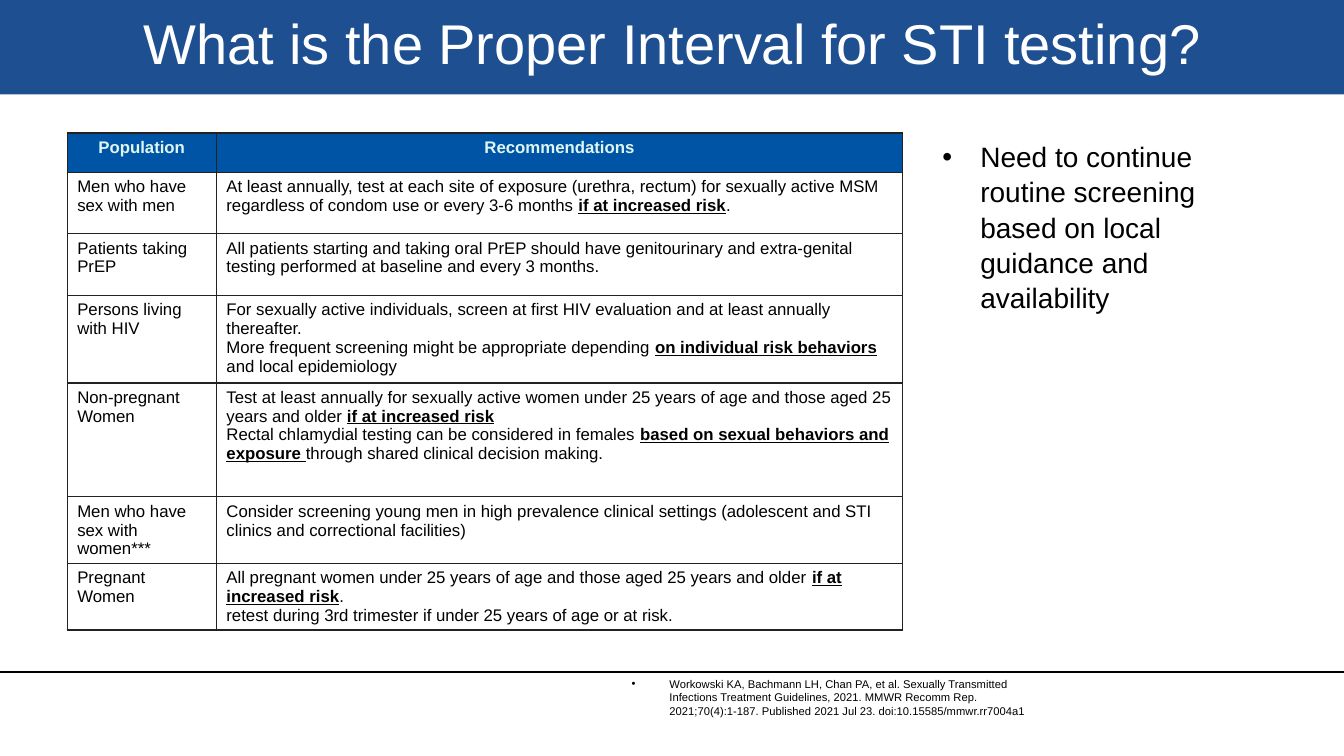
from lxml import etree
from pptx import Presentation
from pptx.dml.color import RGBColor
from pptx.enum import shapes, text
from pptx.oxml import ns
from pptx.util import Pt

COLORS = {
    "band": "1D4F91",
    "header": "0054A6",
    "header_text": "DEF6F1",
    "border": "222222",
    "text": "000000",
    "title": "FFFFFF",
}
FONT = "Arial"
WIDTH, HEIGHT = 960, 540
INDENT = 27
COLUMNS = [106.56, 490.32]
ROWS = [28, 44, 44, 62.6, 81.4, 44, 44]

# Runs alternate between plain and emphasized text.
GUIDANCE = [
    ("Men who have sex with men", [
        ["At least annually, test at each site of exposure (urethra, rectum) for sexually active MSM "
         "regardless of condom use or every 3-6 months ", "if at increased risk", "."],
    ]),
    ("Patients taking PrEP", [
        ["All patients starting and taking oral PrEP should have genitourinary and extra-genital "
         "testing performed at baseline and every 3 months."],
    ]),
    ("Persons living with HIV", [
        ["For sexually active individuals, screen at first HIV evaluation and at least annually thereafter."],
        ["More frequent screening might be appropriate depending ",
         "on individual risk behaviors ", "and local epidemiology"],
    ]),
    ("Non-pregnant Women", [
        ["Test at least annually for sexually active women under 25 years of age and those aged "
         "25 years and older ", "if at increased risk"],
        ["Rectal chlamydial testing can be considered in females ",
         "based on sexual behaviors and exposure ", "through shared clinical decision making."],
    ]),
    ("Men who have sex with women***", [
        ["Consider screening young men in high prevalence clinical settings (adolescent and STI "
         "clinics and correctional facilities)"],
    ]),
    ("Pregnant Women", [
        ["All pregnant women under 25 years of age and those aged 25 years and older ",
         "if at increased risk", "."],
        ["retest during 3rd trimester if under 25 years of age or at risk."],
    ]),
]


def rgb(name):
    return RGBColor.from_string(COLORS[name])


def place(item, box):
    item.left, item.top, item.width, item.height = map(Pt, box)


def add_span(para, words, size, color="text", bold=False, underline=False):
    span = para.add_run()
    span.text = words
    span.font.name = FONT
    span.font.size = Pt(size)
    span.font.color.rgb = rgb(color)
    span.font.bold = bold
    span.font.underline = underline


def add_title(page, box, words):
    left, top, width, height = box
    band = page.shapes.add_shape(shapes.MSO_SHAPE.RECTANGLE, *map(Pt, (left, top, width, height + 1.5)))
    band.shadow.inherit = False
    band.fill.solid()
    band.fill.fore_color.rgb = rgb("band")
    band.line.fill.background()
    title = page.shapes.title
    title.element.addprevious(band.element)
    place(title, box)
    frame = title.text_frame
    frame.auto_size = text.MSO_AUTO_SIZE.NONE
    frame.vertical_anchor = text.MSO_ANCHOR.MIDDLE
    para = frame.paragraphs[0]
    para.alignment = text.PP_ALIGN.CENTER
    para.line_spacing = 0.9
    add_span(para, words, 40, "title")


def add_bullet(holder, box, words, size, line_spacing=1.0, space_after=0):
    place(holder, box)
    frame = holder.text_frame
    frame.auto_size = text.MSO_AUTO_SIZE.NONE
    frame.vertical_anchor = text.MSO_ANCHOR.TOP
    para = frame.paragraphs[0]
    props = para._p.get_or_add_pPr()
    props.set("marL", str(Pt(INDENT)))
    props.set("indent", str(-Pt(INDENT)))
    etree.SubElement(props, ns.qn("a:buFont"), typeface=FONT)
    etree.SubElement(props, ns.qn("a:buChar"), char="•")
    para.line_spacing = line_spacing
    para.space_before = Pt(0)
    para.space_after = Pt(space_after)
    add_span(para, words, size)


def add_rule(page, top):
    rule = page.shapes.add_connector(shapes.MSO_CONNECTOR.STRAIGHT, 0, Pt(top), Pt(WIDTH), Pt(top))
    rule.line.color.rgb = rgb("text")
    rule.line.width = Pt(0.75)
    etree.SubElement(rule.element.spPr, ns.qn("a:effectLst"))


def style_cell(cell, fill=None):
    props = cell._tc.get_or_add_tcPr()
    for side in ("lnL", "lnR", "lnT", "lnB"):
        border = etree.SubElement(props, ns.qn(f"a:{side}"), w=str(Pt(1)))
        paint = etree.SubElement(border, ns.qn("a:solidFill"))
        etree.SubElement(paint, ns.qn("a:srgbClr"), val=COLORS["border"])
    if fill:
        cell.fill.solid()
        cell.fill.fore_color.rgb = rgb(fill)
    else:
        cell.fill.background()


def fill_cell(cell, paragraphs):
    style_cell(cell)
    frame = cell.text_frame
    for number, spans in enumerate(paragraphs):
        para = frame.add_paragraph() if number else frame.paragraphs[0]
        for position, words in enumerate(spans):
            strong = position % 2 == 1
            add_span(para, words, 12, bold=strong, underline=strong)


def add_guidance(page, left, top):
    box = (left, top, sum(COLUMNS), sum(ROWS))
    table = page.shapes.add_table(len(ROWS), len(COLUMNS), *map(Pt, box)).table
    table.horz_banding = False
    for column, width in zip(table.columns, COLUMNS):
        column.width = Pt(width)
    for row, height in zip(table.rows, ROWS):
        row.height = Pt(height)
    for cell, heading in zip(table.rows[0].cells, ("Population", "Recommendations")):
        style_cell(cell, "header")
        para = cell.text_frame.paragraphs[0]
        para.alignment = text.PP_ALIGN.CENTER
        add_span(para, heading, 12, "header_text", bold=True)
    for number, (population, advice) in enumerate(GUIDANCE, 1):
        fill_cell(table.cell(number, 0), [[population]])
        fill_cell(table.cell(number, 1), advice)


def main():
    deck = Presentation()
    deck.slide_width, deck.slide_height = Pt(WIDTH), Pt(HEIGHT)
    page = deck.slides.add_slide(deck.slide_layouts[3])
    add_title(page, (0, 0, WIDTH, 66), "What is the Proper Interval for STI testing?")
    add_rule(page, 480)
    add_bullet(page.placeholders[1], (666, 95, 252, 356),
               "Need to continue routine screening based on local guidance and availability",
               20, line_spacing=1.05, space_after=6)
    add_bullet(page.placeholders[2], (444, 480, 300, 60),
               "Workowski KA, Bachmann LH, Chan PA, et al. Sexually Transmitted Infections Treatment "
               "Guidelines, 2021. MMWR Recomm Rep. 2021;70(4):1-187. Published 2021 Jul 23. "
               "doi:10.15585/mmwr.rr7004a1", 8)
    add_guidance(page, 48, 95)
    deck.save("out.pptx")


if __name__ == "__main__":
    main()
